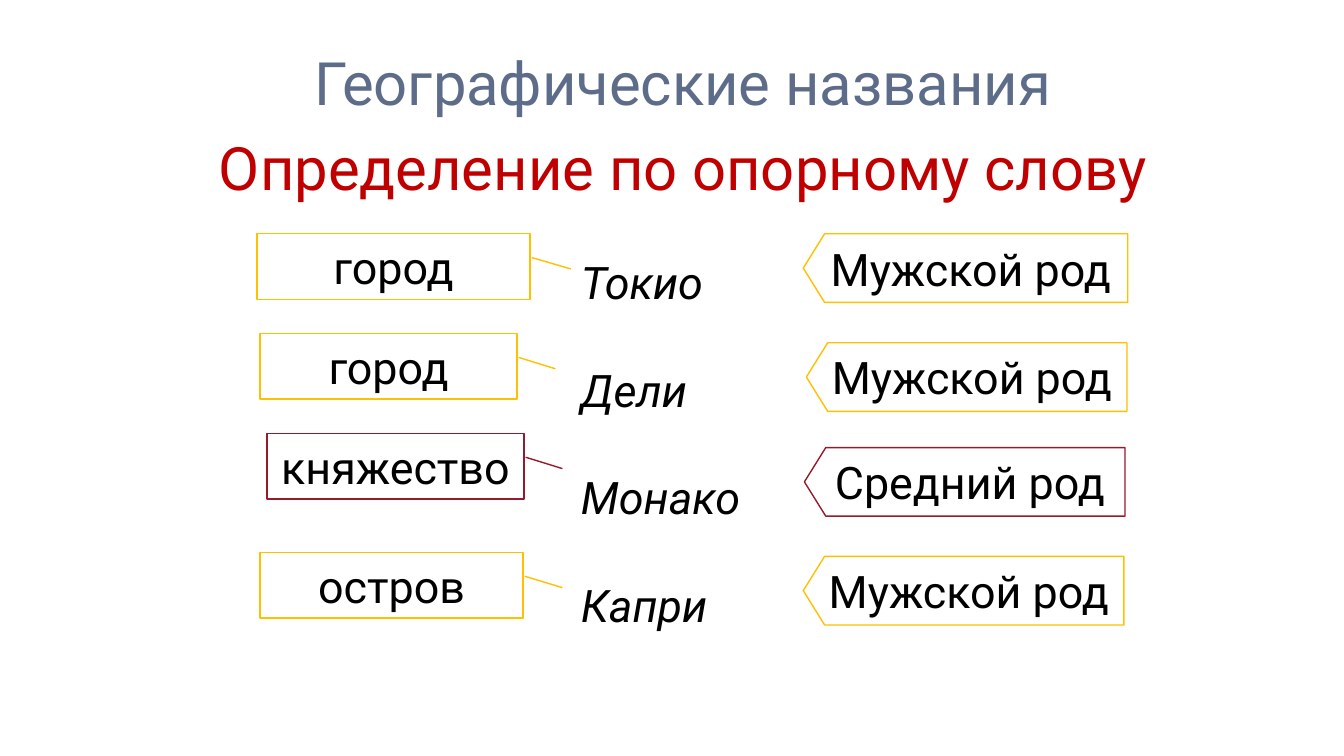
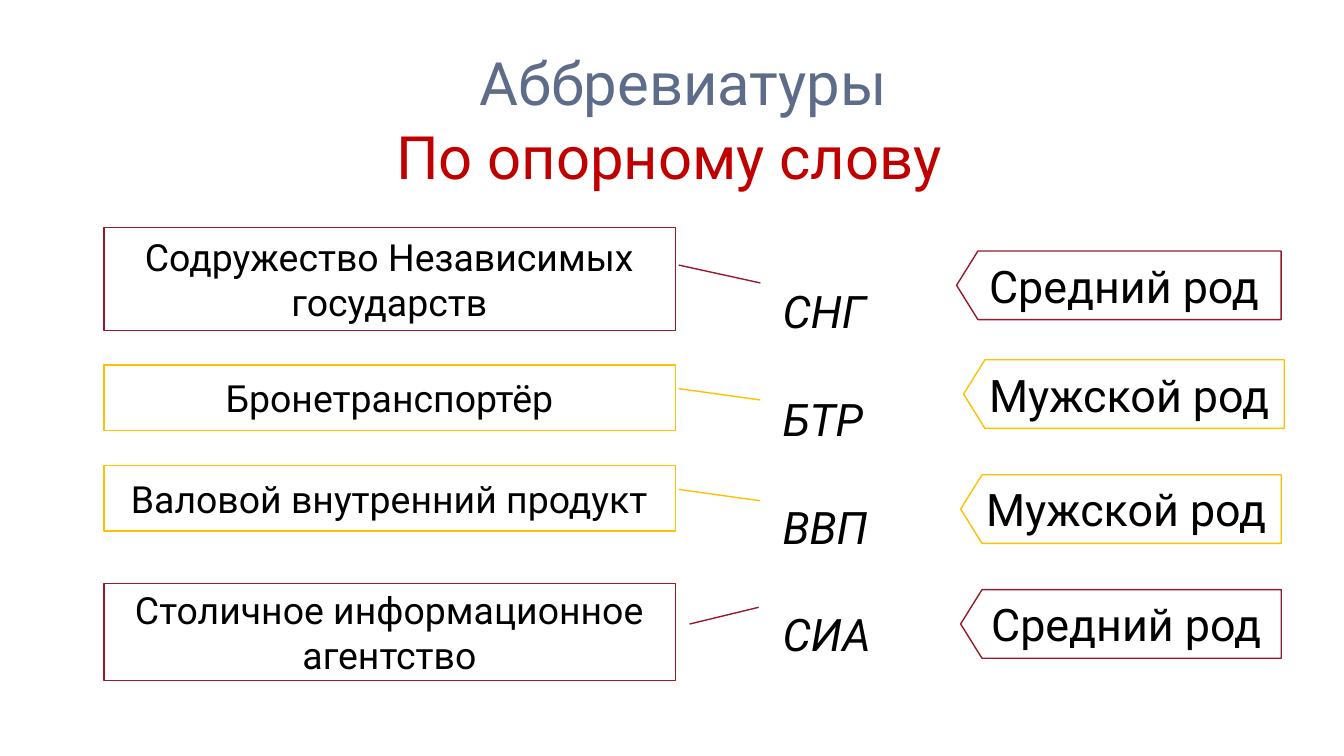
import dataclasses

import pptx
import pptx.dml.color
import pptx.enum.shapes
import pptx.enum.text
import pptx.oxml.ns
import pptx.util

Pt = pptx.util.Pt
Align = pptx.enum.text.PP_ALIGN
Preset = pptx.enum.shapes.MSO_SHAPE


def rgb(value):
    return pptx.dml.color.RGBColor.from_string(value)


@dataclasses.dataclass(frozen=True)
class Theme:
    font: str = "Roboto"
    title: str = "5D6C89"
    subtitle: str = "C00000"
    text: str = "000000"
    fill: str = "FFFFFF"
    masculine: str = "FFC000"
    neuter: str = "951B2C"
    heading_size: float = 42.7
    body_size: float = 32
    phrase_size: float = 26.7
    inset_x: float = 9.6
    inset_y: float = 4.8


@dataclasses.dataclass(frozen=True)
class Gender:
    label: str
    color: str


@dataclasses.dataclass(frozen=True)
class Row:
    keyword: str
    word: str
    gender: Gender
    keyword_box: tuple
    tag_box: tuple
    pointer: tuple = (0.537, -0.149, 0.363, -0.006)


THEME = Theme()
MASCULINE = Gender("Мужской род", THEME.masculine)
NEUTER = Gender("Средний род", THEME.neuter)
TAG_HEIGHT = 49
TAG_POINT = 0.311

PLACE_ROWS = [
    Row("город", "Токио", MASCULINE, (183.6, 167, 195.1, 46.8), (573.8, 167, 231.8)),
    Row("город", "Дели", MASCULINE, (185.8, 238.3, 183.6, 46.8), (576, 244.8, 229)),
    Row("княжество", "Монако", NEUTER, (190.8, 309.6, 183.6, 46.8), (574.6, 319.7, 229)),
    Row("остров", "Капри", MASCULINE, (185.8, 394.6, 187.9, 46.8), (573.8, 397.4, 229)),
]

ABBREVIATION_ROWS = [
    Row("Содружество Независимых государств", "СНГ", NEUTER,
        (74.2, 162.7, 408.2, 73.4), (683.3, 179.3, 231.8)),
    Row("Бронетранспортёр", "БТР", MASCULINE,
        (74.2, 260.6, 408.2, 46.8), (688.3, 257, 229)),
    Row("Валовой внутренний продукт", "ВВП", MASCULINE,
        (74.2, 332.6, 408.2, 46.8), (686.2, 339.1, 229)),
    Row("Столичное информационное агентство", "СИА", NEUTER,
        (74.2, 416.9, 408.2, 69.1), (686.2, 421.2, 229),
        (0.245, -0.146, 0.418, -0.025)),
]


def write_text(shape, lines, size, color, align=Align.CENTER,
               italic=False, spacing=None, inset_x=THEME.inset_x):
    frame = shape.text_frame
    frame.word_wrap = True
    frame.vertical_anchor = pptx.enum.text.MSO_ANCHOR.MIDDLE
    frame.margin_left = frame.margin_right = Pt(inset_x)
    frame.margin_top = frame.margin_bottom = Pt(THEME.inset_y)
    frame.text = "\n".join(lines)
    for paragraph in frame.paragraphs:
        paragraph.alignment = align
        paragraph.line_spacing = spacing
        paragraph.font.name = THEME.font
        paragraph.font.size = Pt(size)
        paragraph.font.italic = italic
        paragraph.font.color.rgb = rgb(color)


def add_heading(slide, text, left, top, color):
    box = slide.shapes.add_textbox(Pt(left), Pt(top), Pt(753), Pt(54.7))
    write_text(box, [text], THEME.heading_size, color)


def add_words(slide, words, left, top):
    box = slide.shapes.add_textbox(Pt(left), Pt(top), Pt(194), Pt(300))
    write_text(box, words, THEME.body_size, THEME.text, Align.LEFT,
               italic=True, spacing=2.0)


def add_flipped_shape(slide, preset, box, adjustments, color):
    shape = slide.shapes.add_shape(preset, *map(Pt, box))
    shape.shadow.inherit = False
    shape.fill.solid()
    shape.fill.fore_color.rgb = rgb(THEME.fill)
    shape.line.color.rgb = rgb(color)
    shape.line.width = Pt(1)
    for index, value in enumerate(adjustments):
        shape.adjustments[index] = value
    transform = shape.element.spPr.find(pptx.oxml.ns.qn("a:xfrm"))
    transform.set("flipH", "1")
    return shape


def add_keyword(slide, row, size):
    callout = add_flipped_shape(slide, Preset.LINE_CALLOUT_1, row.keyword_box,
                                row.pointer, row.gender.color)
    write_text(callout, [row.keyword], size, THEME.text)


def add_gender_tag(slide, row):
    tag = add_flipped_shape(slide, Preset.PENTAGON, (*row.tag_box, TAG_HEIGHT),
                            [TAG_POINT], row.gender.color)
    write_text(tag, [row.gender.label], THEME.body_size, THEME.text, inset_x=7.2)


def add_gender_slide(presentation, title, subtitle, subtitle_at,
                     rows, words_at, keyword_size):
    slide = presentation.slides.add_slide(presentation.slide_layouts[6])
    add_heading(slide, title, 111.6, 31, THEME.title)
    add_heading(slide, subtitle, *subtitle_at, THEME.subtitle)
    add_words(slide, [row.word for row in rows], *words_at)
    for row in rows:
        add_keyword(slide, row, keyword_size)
        add_gender_tag(slide, row)


def main():
    presentation = pptx.Presentation()
    presentation.slide_width = Pt(960)
    presentation.slide_height = Pt(540)
    add_gender_slide(presentation, "Географические названия",
                     "Определение по опорному слову", (111.6, 91.4),
                     PLACE_ROWS, (405.4, 147.4), THEME.body_size)
    add_gender_slide(presentation, "Аббревиатуры",
                     "По опорному слову", (101.5, 83.5),
                     ABBREVIATION_ROWS, (549.4, 168.2), THEME.phrase_size)
    presentation.save("out.pptx")


if __name__ == "__main__":
    main()
